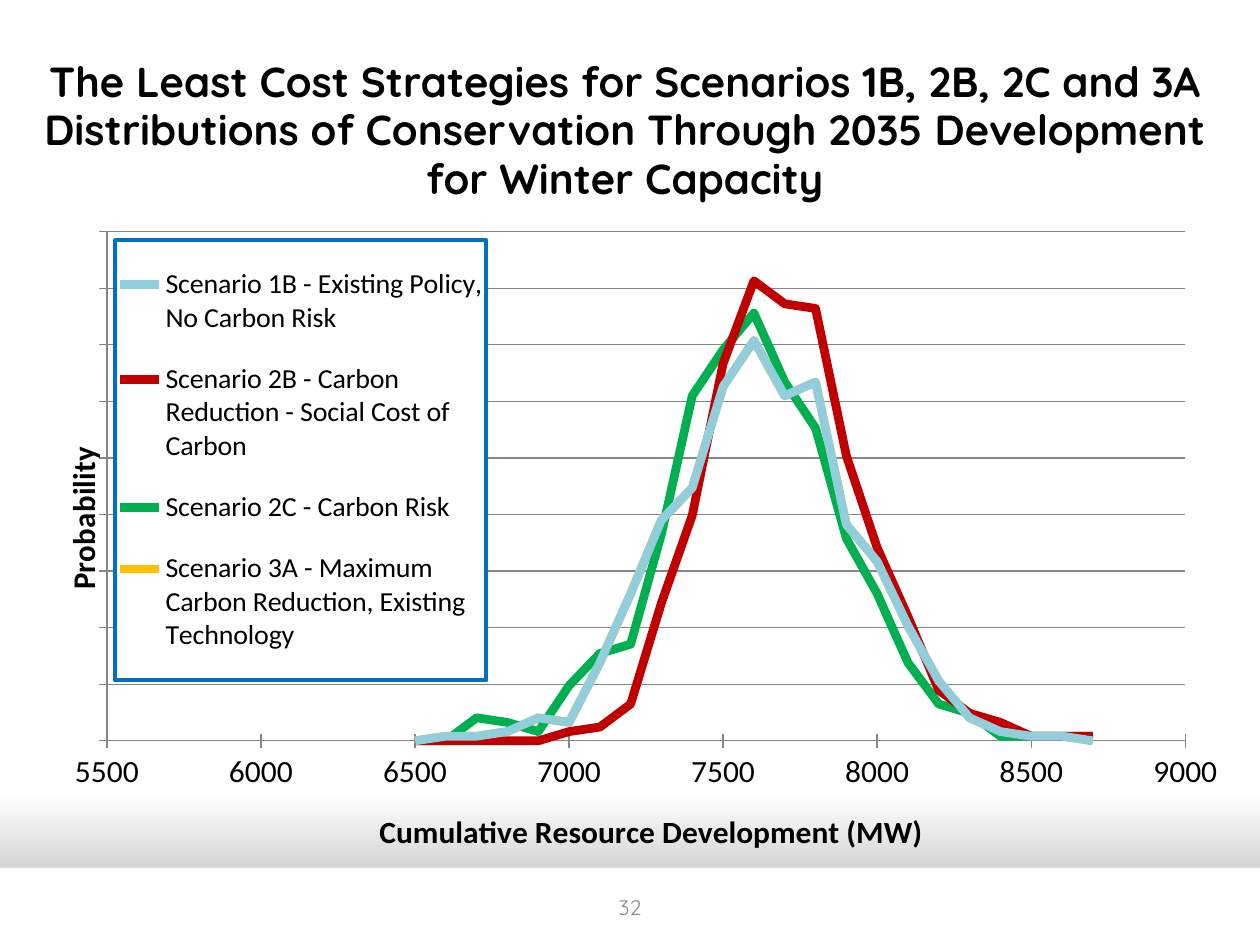
from pptx import Presentation
from pptx.chart.data import XyChartData
from pptx.dml.color import RGBColor
from pptx.enum.chart import XL_CHART_TYPE, XL_LEGEND_POSITION, XL_TICK_LABEL_POSITION, XL_TICK_MARK
from pptx.enum.shapes import MSO_SHAPE
from pptx.enum.text import MSO_ANCHOR, PP_ALIGN
from pptx.oxml import parse_xml
from pptx.oxml.ns import nsdecls, qn
from pptx.util import Pt

SMOOTH = XL_CHART_TYPE.XY_SCATTER_SMOOTH_NO_MARKERS
RIGHT = XL_LEGEND_POSITION.RIGHT
HIDDEN = XL_TICK_LABEL_POSITION.NONE
CROSS = XL_TICK_MARK.CROSS
RECT = MSO_SHAPE.RECTANGLE
MIDDLE = MSO_ANCHOR.MIDDLE
CENTER = PP_ALIGN.CENTER

BLACK = RGBColor(0, 0, 0)
WHITE = RGBColor(255, 255, 255)
SILVER = RGBColor(0xA6, 0xA6, 0xA6)
GRAY = RGBColor(0x8C, 0x8C, 0x8C)
RULE = RGBColor(0x86, 0x86, 0x86)
SKY = RGBColor(0x92, 0xCD, 0xDC)
RED = RGBColor(0xC0, 0, 0)
GREEN = RGBColor(0, 0xB0, 0x50)
GOLD = RGBColor(0xFF, 0xC0, 0)
FRAME = RGBColor(0, 0x70, 0xC0)

LOADS = range(6500, 8701, 100)
BASE = [0, 1, 1, 2, 5, 4, 17, 32, 48, 55, 77, 87, 75, 78, 47, 39, 25, 13, 5, 2, 1, 1, 0]
CURVES = [
    ("Scenario 1B - Existing Policy, No Carbon Risk", SKY, BASE),
    ("Scenario 2B - Carbon Reduction - Social Cost of Carbon", RED,
     [0, 0, 0, 0, 0, 2, 3, 8, 30, 49, 82, 100, 95, 94, 62, 42, 27, 11, 6, 4, 1, 1, 1]),
    ("Scenario 2C - Carbon Risk", GREEN,
     [0, 0, 5, 4, 2, 12, 19, 21, 45, 75, 85, 93, 78, 68, 44, 32, 17, 8, 6, 1, 1, 1, 1]),
    ("Scenario 3A - Maximum Carbon Reduction, Existing Technology", GOLD, BASE),
]


def write(frame, text, size=18, font="Calibri", color=BLACK, bold=False, space=None):
    para = frame.paragraphs[0]
    para.text = text
    para.alignment = CENTER
    para.line_spacing = space
    for run in para.runs:
        run.font.size = Pt(size)
        run.font.name = font
        run.font.bold = bold
        run.font.color.rgb = color


def place(node, index, left, top, wide=None, high=None, inner=False):
    for old in node.findall(qn("c:layout")):
        node.remove(old)
    parts = '<c:layoutTarget val="inner"/>' if inner else ""
    parts += '<c:xMode val="edge"/><c:yMode val="edge"/>'
    sizes = {"x": left, "y": top, "w": wide, "h": high}
    parts += "".join(f'<c:{k} val="{v}"/>' for k, v in sizes.items() if v is not None)
    node.insert(index, parse_xml(
        f'<c:layout {nsdecls("c")}><c:manualLayout>{parts}</c:manualLayout></c:layout>'))


class Deck:
    head = "Quicksand"
    body = "Calibri"

    def __init__(self):
        self.show = Presentation()
        self.show.slide_width, self.show.slide_height = Pt(720), Pt(540)
        self.slide = self.show.slides.add_slide(self.show.slide_layouts[6])

    def shade(self):
        fill = self.slide.background.fill
        fill.gradient()
        fill.gradient_angle = 270
        for stop, color, spot in zip(fill.gradient_stops, (WHITE, SILVER), (0.84, 1)):
            stop.color.rgb = color
            stop.position = spot

    def band(self, *box):
        shape = self.slide.shapes.add_shape(RECT, *map(Pt, box))
        shape.shadow.inherit = False
        shape.fill.solid()
        shape.fill.fore_color.rgb = WHITE
        shape.line.fill.background()

    def text(self, box, words, **style):
        frame = self.slide.shapes.add_textbox(*map(Pt, box)).text_frame
        frame.word_wrap = True
        frame.vertical_anchor = MIDDLE
        write(frame, words, font=self.head, **style)

    def axis(self, axis, title, spot, low, high, step):
        axis.minimum_scale, axis.maximum_scale, axis.major_unit = low, high, step
        axis.major_tick_mark = CROSS
        axis.format.line.color.rgb = RULE
        axis.format.line.width = Pt(0.75)
        write(axis.axis_title.text_frame, title, bold=True)
        place(axis.axis_title._element, 1, *spot)

    def legend(self, chart):
        chart.has_legend = True
        key = chart.legend
        key.position = RIGHT
        key.include_in_layout = True
        key.font.size = Pt(16)
        key.font.name = self.body
        key.font.color.rgb = BLACK
        node = key._element
        place(node, 1, 0.07, 0.015, 0.31, 0.713)
        node.find(qn("c:txPr")).addprevious(parse_xml(
            f'<c:spPr {nsdecls("c", "a")}><a:solidFill><a:srgbClr val="{WHITE}"/></a:solidFill>'
            f'<a:ln w="{Pt(2.25)}"><a:solidFill><a:srgbClr val="{FRAME}"/></a:solidFill></a:ln>'
            '</c:spPr>'))

    def chart(self, box, curves):
        data = XyChartData()
        for name, _, values in curves:
            series = data.add_series(name)
            for load, value in zip(LOADS, values):
                series.add_data_point(load, value)
        chart = self.slide.shapes.add_chart(SMOOTH, *map(Pt, box), data).chart
        chart.has_title = False
        chart.font.size = Pt(18)
        chart.font.name = self.body
        chart.font.color.rgb = BLACK
        plot = chart.plots[0]
        plot.vary_by_categories = False
        for series, (_, color, _) in zip(plot.series, curves):
            series.format.line.color.rgb = color
            series.format.line.width = Pt(5)
        across, up = chart.category_axis, chart.value_axis
        self.axis(across, "Cumulative Resource Development (MW)", (0.286, 0.93), 5500, 9000, 500)
        self.axis(up, "Probability", (0.02, 0.345), 0, 110.7, 12.3)
        across.has_major_gridlines = False
        up.tick_label_position = HIDDEN
        up.has_major_gridlines = True
        up.major_gridlines.format.line.color.rgb = RULE
        up.major_gridlines.format.line.width = Pt(0.75)
        place(chart._chartSpace.chart.plotArea, 0, 0.063, 0.001, 0.901, 0.825, inner=True)
        self.legend(chart)


deck = Deck()
deck.shade()
deck.band(0, 496, 720, 44)
deck.text((12, 12, 690, 126),
          "The Least Cost Strategies for Scenarios 1B, 2B, 2C and 3A\v"
          "Distributions of Conservation Through 2035 Development for Winter Capacity",
          size=24, bold=True, space=0.96)
deck.chart((18, 132, 684, 360), CURVES)
deck.text((276, 504, 168, 29), "32", size=12, color=GRAY)
deck.show.save("out.pptx")
